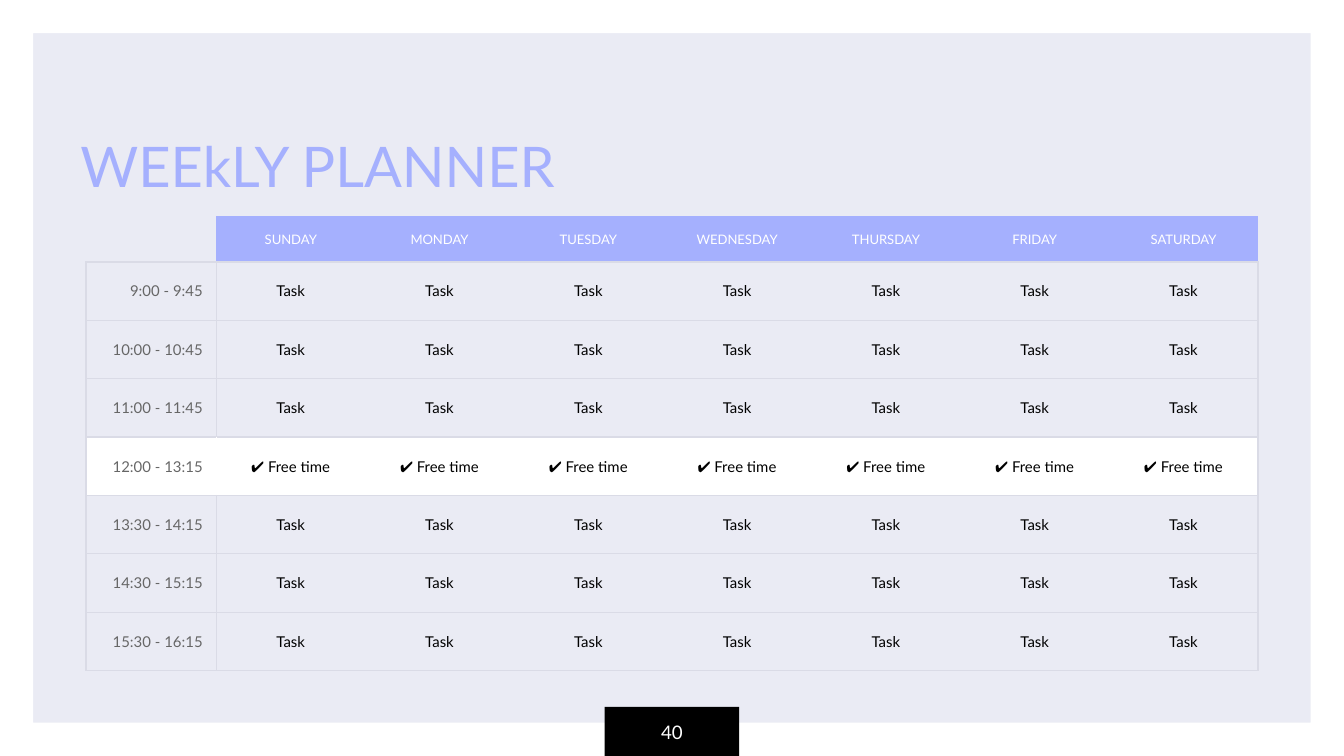
"""Builds a weekly planner slide with a timetable."""
from dataclasses import dataclass

from lxml import etree
from pptx import Presentation
from pptx.dml.color import RGBColor
from pptx.enum.shapes import MSO_SHAPE
from pptx.enum.text import MSO_ANCHOR, PP_ALIGN
from pptx.oxml.ns import qn
from pptx.util import Inches, Pt

FRAME, RECTANGLE = MSO_SHAPE.FRAME, MSO_SHAPE.RECTANGLE
LEFT, CENTER, RIGHT = PP_ALIGN.LEFT, PP_ALIGN.CENTER, PP_ALIGN.RIGHT
MIDDLE, BOTTOM = MSO_ANCHOR.MIDDLE, MSO_ANCHOR.BOTTOM

SLIDE_WIDTH = 10
SLIDE_HEIGHT = SLIDE_WIDTH * 9 / 16
DAYS = ["SUNDAY", "MONDAY", "TUESDAY", "WEDNESDAY", "THURSDAY", "FRIDAY", "SATURDAY"]
SCHEDULE = {
    "9:00 - 9:45": "Task",
    "10:00 - 10:45": "Task",
    "11:00 - 11:45": "Task",
    "12:00 - 13:15": "✔ Free time",
    "13:30 - 14:15": "Task",
    "14:30 - 15:15": "Task",
    "15:30 - 16:15": "Task",
}
NO_STYLE = "{2D5ABB26-0587-4C30-8999-92F81FD0307C}"


@dataclass(frozen=True)
class Theme:
    font: str = "Lato"
    background: str = "EAEBF4"
    accent: str = "A5B0FE"
    grid: str = "DADBE6"
    white: str = "FFFFFF"
    black: str = "000000"
    muted: str = "666666"
    title_size: int = 30
    number_size: int = 10
    body_size: int = 8
    header_size: int = 7
    grid_width: float = 0.75


def write_text(text_frame, text, *, font, size, color, align=LEFT):
    paragraph = text_frame.paragraphs[0]
    paragraph.alignment = align
    if not text:
        etree.SubElement(paragraph._p, qn("a:endParaRPr")).set("sz", str(size * 100))
        return
    run = paragraph.add_run()
    run.text = text
    run.font.name = font
    run.font.size = Pt(size)
    run.font.color.rgb = RGBColor.from_string(color)


def set_margins(target):
    target.margin_left = target.margin_right = Inches(0.1)
    target.margin_top = target.margin_bottom = Inches(0.1)


class PlannerSlide:
    def __init__(self, slide, theme):
        self.slide = slide
        self.theme = theme
        fill = slide.background.fill
        fill.solid()
        fill.fore_color.rgb = RGBColor.from_string(theme.background)

    def add_block(self, kind, left, top, width, height, color):
        shape = self.slide.shapes.add_shape(
            kind, Inches(left), Inches(top), Inches(width), Inches(height))
        shape.shadow.inherit = False
        shape.fill.solid()
        shape.fill.fore_color.rgb = RGBColor.from_string(color)
        shape.line.fill.background()
        return shape

    def add_label(self, text, left, top, width, height, anchor, **text_format):
        box = self.slide.shapes.add_textbox(
            Inches(left), Inches(top), Inches(width), Inches(height))
        text_frame = box.text_frame
        text_frame.word_wrap = True
        text_frame.vertical_anchor = anchor
        set_margins(text_frame)
        write_text(text_frame, text, font=self.theme.font, **text_format)

    def set_borders(self, cell, **colors):
        properties = cell._tc.get_or_add_tcPr()
        for side in "LRTB":
            color = colors.get(side)
            line = etree.SubElement(properties, qn(f"a:ln{side}"))
            line.set("w", str(Pt(self.theme.grid_width)))
            if color:
                fill = etree.SubElement(line, qn("a:solidFill"))
                etree.SubElement(fill, qn("a:srgbClr")).set("val", color)
            else:
                etree.SubElement(line, qn("a:noFill"))

    def fill_cell(self, cell, text, fill, borders, **text_format):
        self.set_borders(cell, **borders)
        if fill:
            cell.fill.solid()
            cell.fill.fore_color.rgb = RGBColor.from_string(fill)
        else:
            cell.fill.background()
        cell.vertical_anchor = MIDDLE
        set_margins(cell)
        write_text(cell.text_frame, text, font=self.theme.font, **text_format)

    def add_timetable(self, left, top, width, height, time_width, header_height):
        theme = self.theme
        table = self.slide.shapes.add_table(
            len(SCHEDULE) + 1, len(DAYS) + 1,
            Inches(left), Inches(top), Inches(width), Inches(height)).table
        table.first_row = table.horz_banding = False
        table._tbl.tblPr.find(qn("a:tableStyleId")).text = NO_STYLE
        for index, column in enumerate(table.columns):
            column.width = Inches((width - time_width) / len(DAYS) if index else time_width)
        for index, row in enumerate(table.rows):
            row.height = Inches(
                (height - header_height) / len(SCHEDULE) if index else header_height)

        for index, day in enumerate(["", *DAYS]):
            self.fill_cell(table.cell(0, index), day, theme.accent if day else None,
                           {"B": theme.grid}, size=theme.header_size,
                           color=theme.white, align=CENTER)

        for row, (time, activity) in enumerate(SCHEDULE.items(), start=1):
            is_free = activity != "Task"
            fill = theme.white if is_free else None
            divider = theme.white if is_free else theme.grid
            rules = {"T": theme.grid, "B": theme.grid}
            self.fill_cell(table.cell(row, 0), time, fill,
                           {**rules, "L": theme.grid, "R": divider},
                           size=theme.body_size, color=theme.muted, align=RIGHT)
            for column in range(1, len(DAYS) + 1):
                borders = dict(rules)
                if column == 1:
                    borders["L"] = divider
                if column == len(DAYS):
                    borders["R"] = theme.grid
                self.fill_cell(table.cell(row, column), activity, fill, borders,
                               size=theme.body_size, color=theme.black, align=CENTER)


def main():
    presentation = Presentation()
    presentation.slide_width = Inches(SLIDE_WIDTH)
    presentation.slide_height = Inches(SLIDE_HEIGHT)
    theme = Theme()
    planner = PlannerSlide(
        presentation.slides.add_slide(presentation.slide_layouts[6]), theme)

    frame = planner.add_block(FRAME, 0, 0, SLIDE_WIDTH, SLIDE_HEIGHT, theme.white)
    frame.adjustments[0] = 0.044
    planner.add_block(RECTANGLE, 4.5, 5.26, 1, 0.37, theme.black)
    planner.add_label("WEEkLY PLANNER", 0.5, 0.64, 5.62, 0.94, BOTTOM,
                      size=theme.title_size, color=theme.accent)
    planner.add_label("40", 4.5, 5.26, 1, 0.37, MIDDLE,
                      size=theme.number_size, color=theme.white, align=CENTER)
    planner.add_timetable(0.64, 1.61, 8.72, 3.38, time_width=0.97, header_height=0.34)
    presentation.save("out.pptx")


if __name__ == "__main__":
    main()
